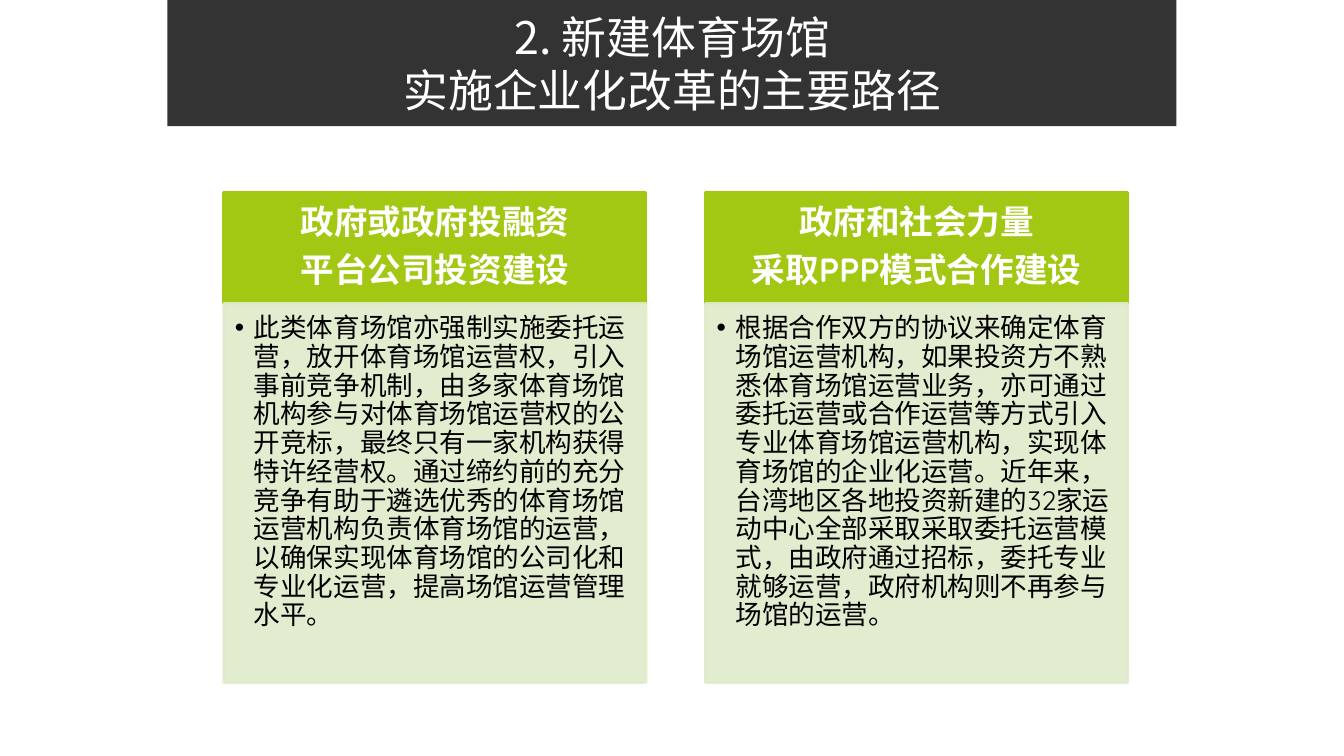
"""Build a slide on two routes to reform of new sports venues."""
from dataclasses import dataclass

from lxml import etree
from pptx import Presentation
from pptx.dml.color import RGBColor
from pptx.enum.shapes import MSO_SHAPE
from pptx.enum.text import MSO_ANCHOR, PP_ALIGN
from pptx.oxml.ns import qn
from pptx.util import Cm, Pt

RECT = MSO_SHAPE.RECTANGLE
TOP, MIDDLE = MSO_ANCHOR.TOP, MSO_ANCHOR.MIDDLE
LEFT, CENTER = PP_ALIGN.LEFT, PP_ALIGN.CENTER


@dataclass(frozen=True)
class Theme:
    """Colours, fonts and type sizes of the slide."""
    dark: str = "333333"
    green: str = "A2C813"
    pale: str = "DFEBCB"
    white: str = "FFFFFF"
    black: str = "000000"
    han: str = "Noto Sans CJK SC"
    latin: str = "Quicksand"
    title: int = 32
    head: int = 24
    body: int = 19


THEME = Theme()
TITLE = "2. 新建体育场馆\v实施企业化改革的主要路径"
PANELS = [
    (["政府或政府投融资", "平台公司投资建设"],
     "此类体育场馆亦强制实施委托运营，放开体育场馆运营权，引入事前竞争机制，"
     "由多家体育场馆机构参与对体育场馆运营权的公开竞标，最终只有一家机构获得"
     "特许经营权。通过缔约前的充分竞争有助于遴选优秀的体育场馆运营机构负责"
     "体育场馆的运营，以确保实现体育场馆的公司化和专业化运营，提高场馆运营管理水平。"),
    (["政府和社会力量", "采取PPP模式合作建设"],
     "根据合作双方的协议来确定体育场馆运营机构，如果投资方不熟悉体育场馆运营业务，"
     "亦可通过委托运营或合作运营等方式引入专业体育场馆运营机构，实现体育场馆的"
     "企业化运营。近年来，台湾地区各地投资新建的32家运动中心全部采取采取委托运营模式，"
     "由政府通过招标，委托专业就够运营，政府机构则不再参与场馆的运营。"),
]


def add_box(slide, area, color, edge=False, alpha=None):
    """Draw a filled rectangle, with a matching edge and opacity if asked."""
    box = slide.shapes.add_shape(RECT, *map(Cm, area))
    box.shadow.inherit = False
    box.fill.solid()
    box.fill.fore_color.rgb = RGBColor.from_string(color)
    if edge:
        box.line.color.rgb = RGBColor.from_string(color)
        box.line.width = Pt(2)
    else:
        box.line.fill.background()
    if alpha:
        for tint in box._element.spPr.iter(qn("a:srgbClr")):
            etree.SubElement(tint, qn("a:alpha"), val=str(alpha * 1000))
    return box


def add_bullet(para, indent):
    """Give a paragraph a hanging round bullet."""
    props = para._p.get_or_add_pPr()
    props.set("marL", str(indent))
    props.set("indent", str(-indent))
    etree.SubElement(props, qn("a:buFont"), typeface="Arial")
    etree.SubElement(props, qn("a:buChar"), char="•")


def put_text(box, lines, *, size, color, pad, latin=THEME.latin, bold=False,
             align=CENTER, anchor=MIDDLE, pitch=None, after=0, bullet=False):
    """Write paragraphs into a shape with one format."""
    frame = box.text_frame
    frame.word_wrap = True
    frame.vertical_anchor = anchor
    (frame.margin_left, frame.margin_top,
     frame.margin_right, frame.margin_bottom) = map(Cm, pad)
    for index, line in enumerate(lines):
        para = frame.add_paragraph() if index else frame.paragraphs[0]
        if bullet:
            add_bullet(para, Cm(0.48))
        para.text = line
        para.alignment = align
        para.line_spacing = pitch
        para.space_after = Pt(after)
        for run in para.runs:
            font = run.font
            font.size, font.bold, font.name = Pt(size), bold, latin
            font.color.rgb = RGBColor.from_string(color)
            etree.SubElement(run._r.get_or_add_rPr(), qn("a:ea"),
                             typeface=THEME.han)


def add_title(slide):
    """Draw the dark title band."""
    band = add_box(slide, (4.22, 0, 25.43, 3.18), THEME.dark)
    put_text(band, [TITLE], size=THEME.title, color=THEME.white,
             latin=THEME.han, pad=(0.79, 0.13, 0.76, 0.13))


def add_panel(slide, left, head, body):
    """Draw a green heading above a pale body."""
    top, width, height = 4.85, 10.64, 2.8
    cap = add_box(slide, (left, top, width, height), THEME.green, edge=True)
    put_text(cap, head, size=THEME.head, color=THEME.white, bold=True,
             pad=(0.48, 0.28, 0.48, 0.28), pitch=0.9, after=8.4)
    card = add_box(slide, (left, top + height, width, 9.55), THEME.pale,
                   edge=True, alpha=89)
    put_text(card, [body], size=THEME.body, color=THEME.black, align=LEFT,
             anchor=TOP, pad=(0.28, 0.28, 0.38, 0.43), pitch=0.9,
             after=2.85, bullet=True)


def main():
    """Build and save the slide."""
    deck = Presentation()
    deck.slide_width, deck.slide_height = Cm(33.87), Cm(19.05)
    slide = deck.slides.add_slide(deck.slide_layouts[6])
    add_title(slide)
    for index, (head, body) in enumerate(PANELS):
        add_panel(slide, 5.64 + 12.14 * index, head, body)
    deck.save("out.pptx")


if __name__ == "__main__":
    main()
